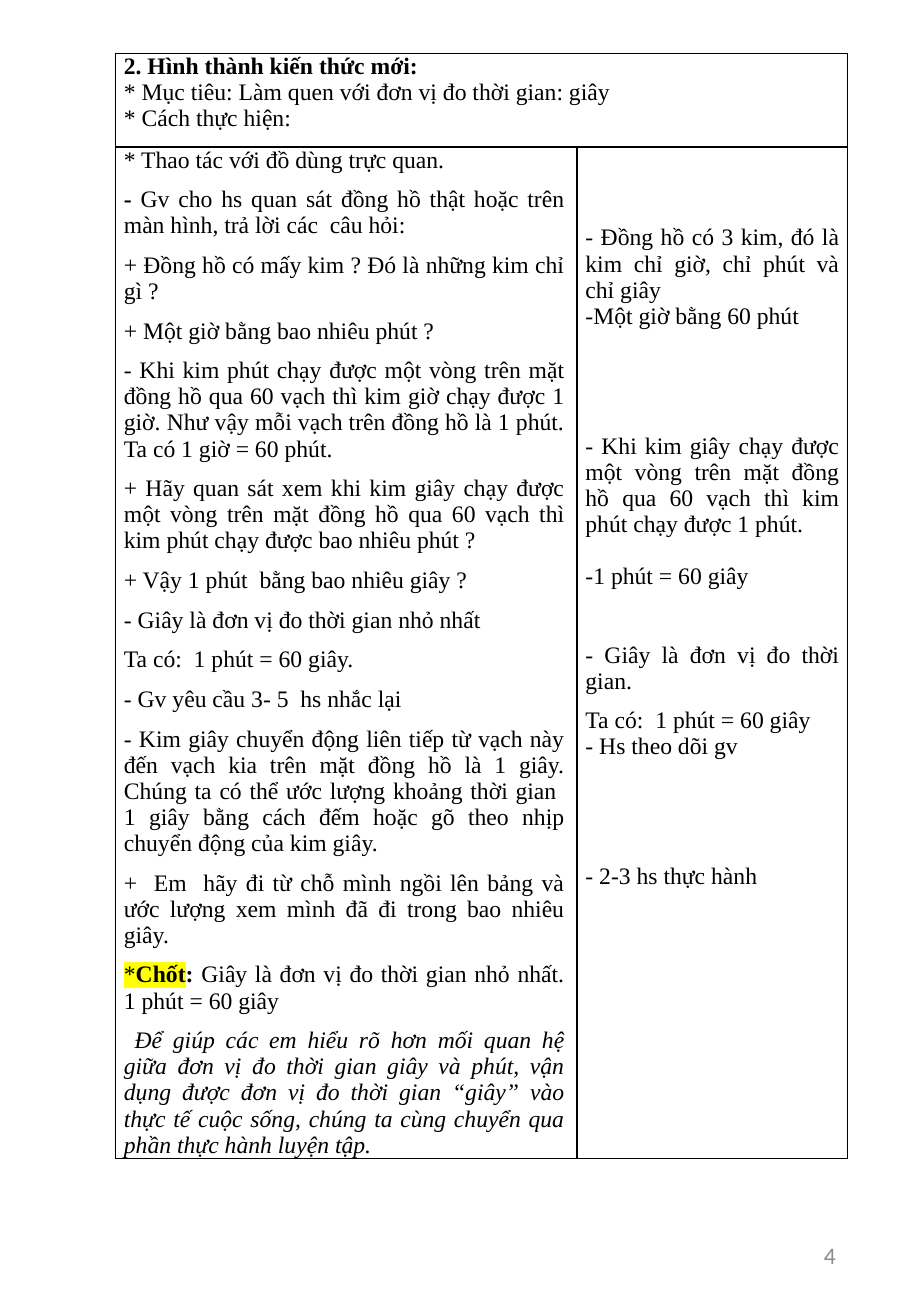
from lxml import etree
from pptx import Presentation
from pptx.dml.color import RGBColor
from pptx.enum.text import MSO_ANCHOR, PP_ALIGN
from pptx.oxml.ns import qn
from pptx.util import Inches, Pt

JUSTIFY, RIGHT = PP_ALIGN.JUSTIFY, PP_ALIGN.RIGHT
TOP, MIDDLE = MSO_ANCHOR.TOP, MSO_ANCHOR.MIDDLE
SLIDE_W, SLIDE_H = Inches(7.5), Inches(10.83)
COLUMNS, ROWS = (3.8, 2.23), (0.77, 8.32)


class Theme:
    body_font, number_font = "Times New Roman", "Calibri"
    text_size = Pt(14)
    line_pitch = 15.4
    paragraph_gap = 8
    ink, number_ink, marker = "000000", "8C8C8C", "FFFF00"
    border_width = Pt(0.75)
    side_margin, wide_margin = Inches(0.07), Inches(0.1)


# Each paragraph is a string or a list of (text, format, highlighted) runs.
BOLD, ITALIC = {"bold": True}, {"italic": True}

HEADING = [
    [("2. Hình thành kiến thức mới:", BOLD, False)],
    "* Mục tiêu: Làm quen với đơn vị đo thời gian: giây",
    "* Cách thực hiện: ",
]

TEACHER = [
    "* Thao tác với đồ dùng trực quan.",
    [("- ", BOLD, False),
     ("Gv cho hs quan sát đồng hồ thật hoặc trên màn hình, trả lời các  câu hỏi:", {}, False)],
    "+ Đồng hồ có mấy kim ? Đó là những kim chỉ gì ? ",
    "+ Một giờ bằng bao nhiêu phút ?",
    "- Khi kim phút chạy được một vòng trên mặt đồng hồ qua 60 vạch thì kim giờ chạy "
    "được 1 giờ. Như vậy mỗi vạch trên đồng hồ là 1 phút. Ta có 1 giờ = 60 phút.",
    "+ Hãy quan sát xem khi kim giây chạy được một vòng trên mặt đồng hồ qua 60 vạch "
    "thì kim phút chạy được bao nhiêu phút ?",
    "+ Vậy 1 phút  bằng bao nhiêu giây ?",
    "- Giây là đơn vị đo thời gian nhỏ nhất",
    "Ta có:  1 phút = 60 giây.",
    "- Gv yêu cầu 3- 5  hs nhắc lại",
    "- Kim giây chuyển động liên tiếp từ vạch này đến vạch kia trên mặt đồng hồ là "
    "1 giây. Chúng ta có thể ước lượng khoảng thời gian  1 giây bằng cách đếm hoặc gõ "
    "theo nhịp chuyển động của kim giây. ",
    "+  Em  hãy đi từ chỗ mình ngồi lên bảng và ước lượng xem mình đã đi trong bao "
    "nhiêu giây.",
    [("*", {}, True), ("Chốt", BOLD, True), (": ", BOLD, False),
     ("Giây là đơn vị đo thời gian nhỏ nhất. 1 phút = 60 giây", {}, False)],
    [(" ", {}, False),
     ("Để giúp các em hiểu rõ hơn mối quan hệ giữa đơn vị đo thời gian giây và phút, "
      "vận dụng được đơn vị đo thời gian “giây” vào thực tế cuộc sống, chúng ta cùng "
      "chuyển qua phần thực hành luyện tập.", ITALIC, False)],
]

# Answers with the space above each one, in points.
PUPIL_TOP = 3 * Theme.line_pitch
PUPIL = [
    (0, "- Đồng hồ có 3 kim, đó là kim chỉ giờ, chỉ phút và chỉ giây"),
    (0, "-Một giờ bằng 60 phút"),
    (4 * Theme.line_pitch,
     "- Khi kim giây chạy được một vòng trên mặt đồng hồ qua 60 vạch thì kim phút "
     "chạy được 1 phút."),
    (Theme.line_pitch, "-1 phút = 60 giây"),
    (2 * Theme.line_pitch, "- Giây là đơn vị đo thời gian. "),
    (Theme.paragraph_gap, "Ta có:  1 phút = 60 giây"),
    (0, "- Hs theo dõi gv "),
    (4 * Theme.line_pitch, "- 2-3 hs thực hành"),
]


def apply(target, formats):
    for name, value in formats.items():
        setattr(target, name, value)


def add_run(paragraph, text, formats, highlighted=False, color=Theme.ink):
    run = paragraph.add_run()
    run.text = text
    apply(run.font, {"name": Theme.body_font, "size": Theme.text_size,
                     "bold": False, "italic": False, **formats})
    run.font.color.rgb = RGBColor.from_string(color)
    if highlighted:
        highlight = etree.Element(qn("a:highlight"))
        etree.SubElement(highlight, qn("a:srgbClr"), val=Theme.marker)
        run._r.rPr.find(qn("a:solidFill")).addnext(highlight)


def write_paragraphs(frame, contents, gaps_before):
    for index, (content, gap) in enumerate(zip(contents, gaps_before)):
        paragraph = frame.add_paragraph() if index else frame.paragraphs[0]
        apply(paragraph, {"alignment": JUSTIFY, "space_before": Pt(gap)})
        runs = [(content, {}, False)] if isinstance(content, str) else content
        for run in runs:
            add_run(paragraph, *run)


def style_cell(cell, formats):
    apply(cell, {"margin_left": Theme.side_margin, "margin_right": Theme.side_margin,
                 "margin_top": 0, "margin_bottom": 0, "vertical_anchor": TOP,
                 **formats})
    properties = cell._tc.get_or_add_tcPr()
    for side in ("lnL", "lnR", "lnT", "lnB"):
        border = etree.SubElement(properties, qn(f"a:{side}"), w=str(Theme.border_width))
        fill = etree.SubElement(border, qn("a:solidFill"))
        etree.SubElement(fill, qn("a:srgbClr"), val=Theme.ink)
    cell.fill.background()


def add_lesson_table(slide):
    table = slide.shapes.add_table(
        len(ROWS), len(COLUMNS), Inches(0.95), Inches(0.44),
        Inches(sum(COLUMNS)), Inches(sum(ROWS))).table
    apply(table, {"first_row": False, "horz_banding": False})
    for column, width in zip(table.columns, COLUMNS):
        column.width = Inches(width)
    for row, height in zip(table.rows, ROWS):
        row.height = Inches(height)
    heading, heading_end = table.cell(0, 0), table.cell(0, 1)
    teacher, pupil = table.cell(1, 0), table.cell(1, 1)
    heading.merge(heading_end)
    style_cell(heading, {})
    style_cell(heading_end, {})
    style_cell(teacher, {"margin_right": Theme.wide_margin})
    style_cell(pupil, {"margin_top": Pt(PUPIL_TOP)})

    # Lesson heading, teacher's steps, pupils' answers
    write_paragraphs(heading.text_frame, HEADING, [0] * len(HEADING))
    step_gaps = [0] + [Theme.paragraph_gap] * (len(TEACHER) - 1)
    write_paragraphs(teacher.text_frame, TEACHER, step_gaps)
    answer_gaps, answers = zip(*PUPIL)
    write_paragraphs(pupil.text_frame, answers, answer_gaps)


def add_page_number(slide, number):
    frame = slide.shapes.add_textbox(
        Inches(5.29), Inches(10.04), Inches(1.69), Inches(0.58)).text_frame
    apply(frame, {"word_wrap": True, "vertical_anchor": MIDDLE})
    frame.paragraphs[0].alignment = RIGHT
    add_run(frame.paragraphs[0], number, {"name": Theme.number_font},
            color=Theme.number_ink)


def main():
    deck = Presentation()
    apply(deck, {"slide_width": SLIDE_W, "slide_height": SLIDE_H})
    slide = deck.slides.add_slide(deck.slide_layouts[6])
    add_lesson_table(slide)
    add_page_number(slide, "4")
    deck.save("out.pptx")


if __name__ == "__main__":
    main()
